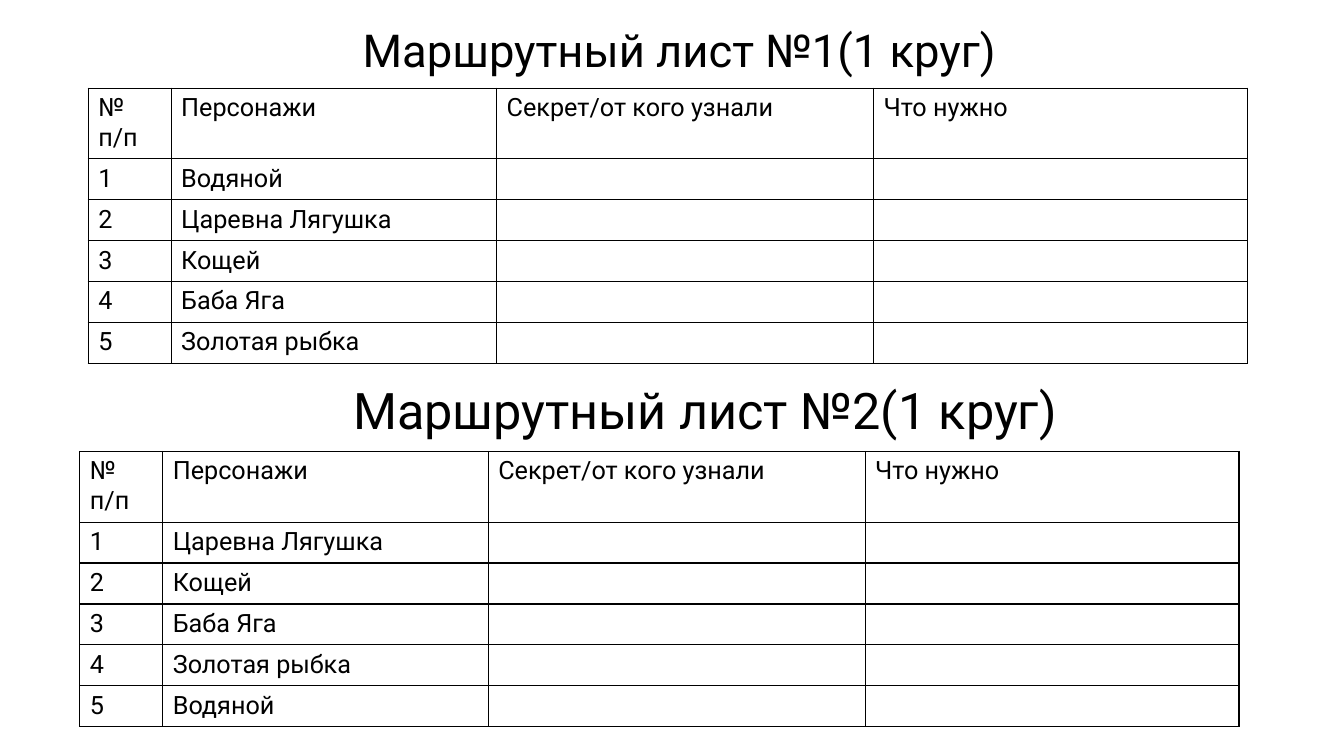
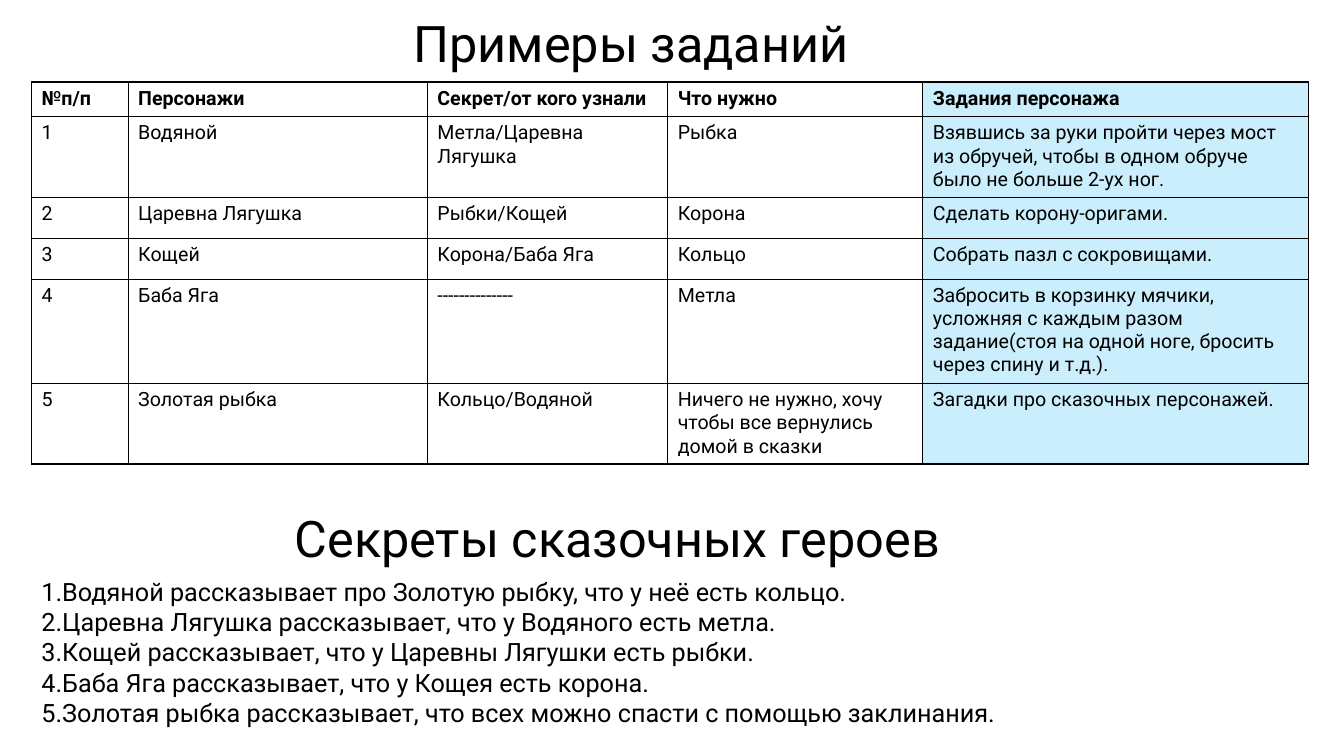
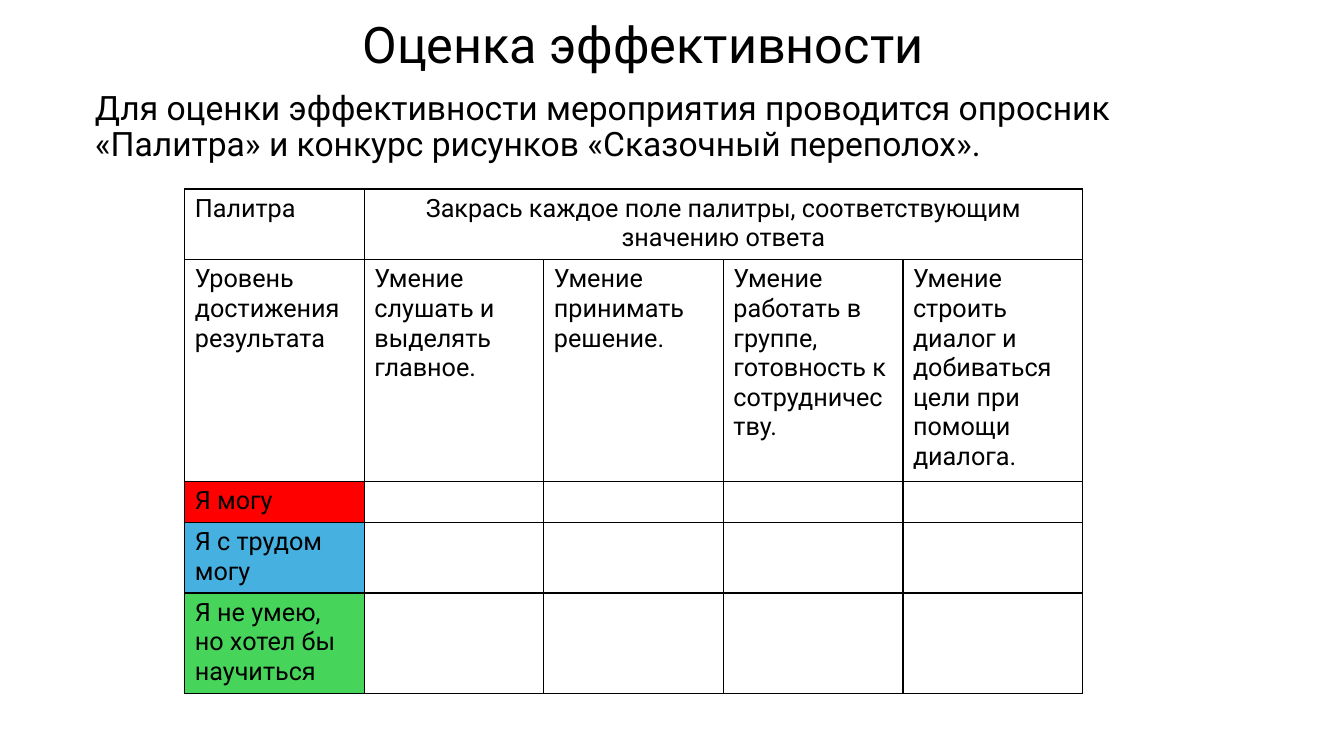
from dataclasses import dataclass

from lxml.etree import SubElement
from pptx import Presentation
from pptx.dml.color import RGBColor
from pptx.enum.text import MSO_ANCHOR as Anchor, PP_ALIGN as Align
from pptx.oxml.ns import qn
from pptx.util import Pt

PX = 9525


@dataclass(frozen=True)
class Theme:
    """Colours, font and type sizes of the deck."""
    font: str = "Roboto"
    ink: str = "000000"
    paper: str = "FFFFFF"
    task: str = "CAEEFB"
    can: str = "FF0000"
    hardly: str = "46B1E1"
    learning: str = "47D45A"
    title: float = 36
    first_title: float = 32.4
    lead: float = 24
    body: float = 18
    small: float = 14
    rule: int = 12700


THEME = Theme()
HEROES = ["Водяной", "Царевна Лягушка", "Кощей", "Баба Яга", "Золотая рыбка"]
ROUTE_HEADER = ["Персонажи", "Секрет/от кого узнали", "Что нужно"]
TASKS = [
    ["Метла/Царевна Лягушка", "Рыбка",
     "Взявшись за руки пройти через мост из обручей, чтобы в одном обруче было не больше 2-ух ног."],
    ["Рыбки/Кощей", "Корона", "Сделать корону-оригами."],
    ["Корона/Баба Яга", "Кольцо", "Собрать пазл с сокровищами."],
    ["--------------", "Метла",
     "Забросить в корзинку мячики, усложняя с каждым разом задание"
     "(стоя на одной ноге, бросить через спину и т.д.)."],
    ["Кольцо/Водяной", "Ничего не нужно, хочу чтобы все вернулись домой в сказки",
     "Загадки про сказочных персонажей."],
]
SECRETS = [
    "1.Водяной рассказывает про Золотую рыбку, что у неё есть кольцо.",
    "2.Царевна Лягушка рассказывает, что у Водяного есть метла.",
    "3.Кощей рассказывает, что у Царевны Лягушки есть рыбки.",
    "4.Баба Яга рассказывает, что у Кощея есть корона.",
    "5.Золотая рыбка рассказывает, что всех можно спасти с помощью заклинания.",
]
SKILLS = [
    "Уровень достижения результата",
    "Умение слушать и выделять главное.",
    "Умение принимать решение.",
    "Умение работать в группе, готовность к сотрудничеству.",
    "Умение строить диалог и добиваться цели при помощи диалога.",
]
LEVELS = {
    "Я могу": THEME.can,
    "Я с трудом могу": THEME.hardly,
    "Я не умею, но хотел бы научиться": THEME.learning,
}


def write(frame, text, size=THEME.body, bold=False, align=Align.LEFT, spacing=1.0, before=0):
    """Fill a text frame, one paragraph for each line of text."""
    for number, line in enumerate(text.split("\n")):
        paragraph = frame.add_paragraph() if number else frame.paragraphs[0]
        paragraph.alignment = align
        paragraph.line_spacing = spacing
        paragraph.space_before = Pt(before)
        run = paragraph.add_run()
        run.text = line
        run.font.name = THEME.font
        run.font.size = Pt(size)
        run.font.bold = bold
        run.font.color.rgb = RGBColor.from_string(THEME.ink)


def add_text(slide, box, text, anchor=Anchor.TOP, **style):
    """Place wrapped text in a box of px."""
    frame = slide.shapes.add_textbox(*(length * PX for length in box)).text_frame
    frame.word_wrap = True
    frame.vertical_anchor = anchor
    write(frame, text, **style)


def add_title(slide, box, text, **style):
    """Place a title, centred unless the style says otherwise."""
    write_style = dict(anchor=Anchor.MIDDLE, size=THEME.title, align=Align.CENTER, spacing=0.9)
    add_text(slide, box, text, **{**write_style, **style})


def add_borders(cell):
    """Rule all four sides of a cell."""
    properties = cell._tc.get_or_add_tcPr()
    for place, side in enumerate(("lnL", "lnR", "lnT", "lnB")):
        line = SubElement(properties, qn(f"a:{side}"), w=str(THEME.rule))
        ink = SubElement(SubElement(line, qn("a:solidFill")), qn("a:srgbClr"))
        ink.set("val", THEME.ink)
        properties.insert(place, line)


def add_grid(slide, left, top, columns, heights, rows, fills=None, style=None):
    """Draw a ruled table; fills and style map a row and column to its look."""
    frame = slide.shapes.add_table(
        len(heights), len(columns), left * PX, top * PX, sum(columns) * PX, sum(heights) * PX)
    grid = frame.table
    grid.first_row = grid.horz_banding = False
    for column, width in zip(grid.columns, columns):
        column.width = width * PX
    for row, height in zip(grid.rows, heights):
        row.height = height * PX
    for r, row in enumerate(rows):
        for c, text in enumerate(row):
            cell = grid.cell(r, c)
            colour = (fills or {}).get((r, c))
            if colour:
                cell.fill.solid()
                cell.fill.fore_color.rgb = RGBColor.from_string(colour)
            else:
                cell.fill.background()
            add_borders(cell)
            if text:
                write(cell.text_frame, text, **(style(r, c) if style else {}))
    return grid


def route_sheet(slide, left, top, number, title_box, table_drop, **title_style):
    """Place a route title and its table, starting from the hero of that number."""
    x, y, width, height = title_box
    add_title(slide, (left + x, top + y, width, height), f"Маршрутный лист №{number}(1 круг)",
              align=Align.LEFT, **title_style)
    route = HEROES[number - 1:] + HEROES[:number - 1]
    rows = [["№ п/п", *ROUTE_HEADER]]
    rows += [[str(step), hero, "", ""] for step, hero in enumerate(route, 1)]
    add_grid(slide, left, top + table_drop, [79, 310, 359, 356], [66] + [39] * 5, rows)


def task_examples(slide, left, top):
    """Place the table of tasks under its title."""
    add_title(slide, (left + 196, top, 762, 49), "Примеры заданий ")
    rows = [["№п/п", *ROUTE_HEADER, "Задания персонажа"]]
    rows += [[str(step), hero, *task] for step, (hero, task) in enumerate(zip(HEROES, TASKS), 1)]
    add_grid(slide, left, top + 58, [92, 285, 229, 243, 367], [33, 75, 39, 39, 98, 76], rows,
             fills={(r, 4): THEME.task for r in range(len(rows))},
             style=lambda r, c: dict(size=THEME.small, bold=r == 0))


def hero_secrets(slide, left, top):
    """Place the list of secrets under its title."""
    add_text(slide, (left, top + 53, 1216, 156), "\n".join(SECRETS))
    add_title(slide, (left + 183, top, 762, 49), "Секреты сказочных героев ")


def palette_survey(slide, left, top):
    """Place the survey title, its lead and the palette table."""
    add_title(slide, (left + 150, top, 775, 74), "Оценка эффективности ")
    add_text(slide, (left, top + 74, 1104, 457),
             "Для оценки эффективности мероприятия проводится опросник «Палитра» "
             "и конкурс рисунков «Сказочный переполох».",
             size=THEME.lead, spacing=0.9, before=10)
    question = "Закрась каждое поле палитры, соответствующим значению ответа"
    rows = [["Палитра", question, "", "", ""], SKILLS]
    rows += [[level, "", "", "", ""] for level in LEVELS]
    palette = add_grid(slide, left + 95, top + 172, [171] * 5, [66, 207, 39, 66, 95], rows,
                       fills={(r, 0): colour for r, colour in enumerate(LEVELS.values(), 2)},
                       style=lambda r, c: dict(align=Align.CENTER if (r, c) == (0, 1) else Align.LEFT))
    palette.cell(0, 1).merge(palette.cell(0, 4))


def main():
    """Build and save the three slides."""
    deck = Presentation()
    deck.slide_width, deck.slide_height = 1280 * PX, 720 * PX
    background = deck.slide_master.background.fill
    background.solid()
    background.fore_color.rgb = RGBColor.from_string(THEME.paper)
    routes, tasks, survey = (deck.slides.add_slide(deck.slide_layouts[6]) for _ in range(3))

    route_sheet(routes, 84, 17, 1, (252, 0, 738, 66), 67, size=THEME.first_title)
    route_sheet(routes, 76, 356, 2, (251, 0, 777, 68), 74, anchor=Anchor.TOP, spacing=1.0)
    task_examples(tasks, 30, 20)
    hero_secrets(tasks, 30, 491)
    palette_survey(survey, 81, 8)
    deck.save("out.pptx")


if __name__ == "__main__":
    main()
